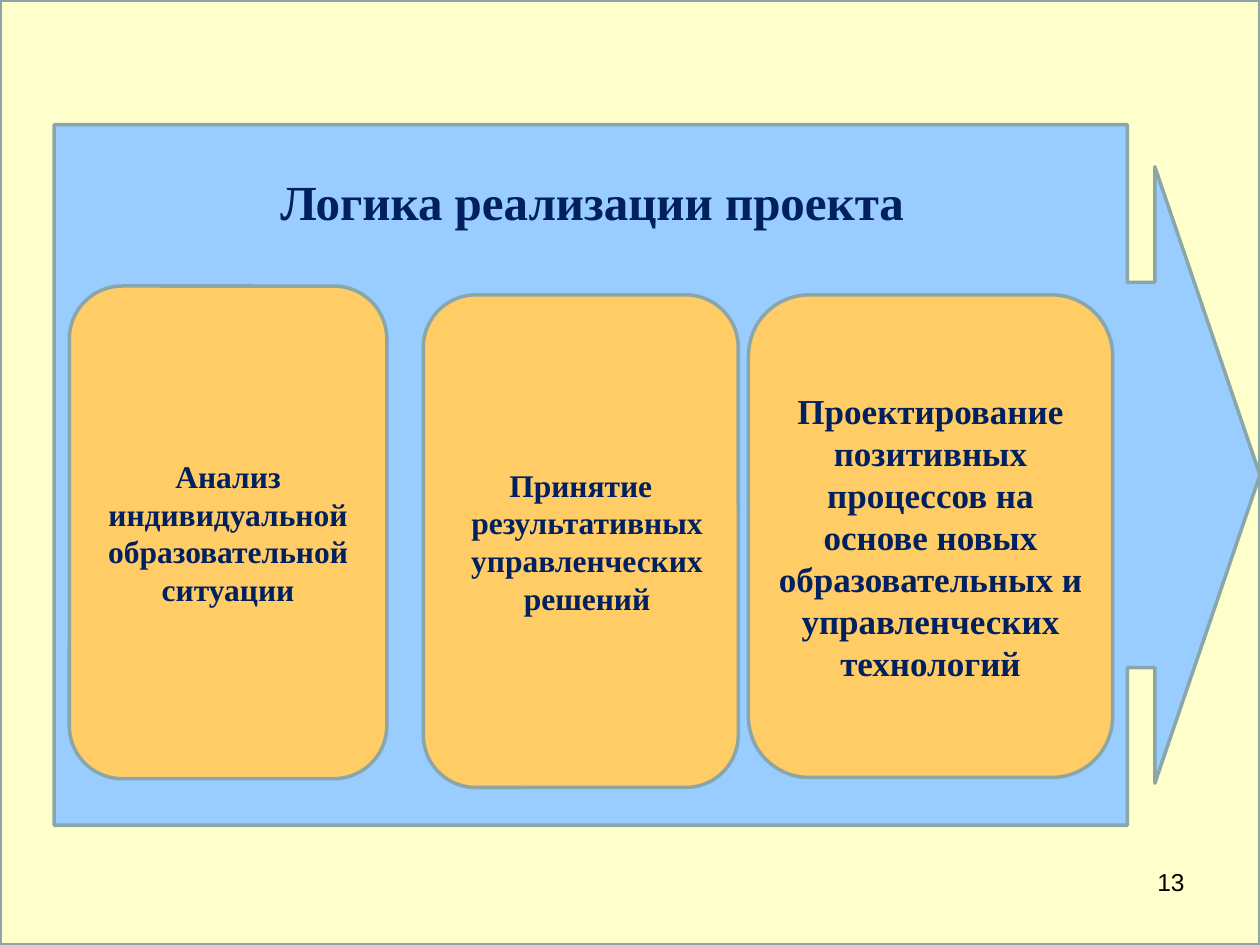
"""Build the project logic slide: three stages inside a callout arrow."""
from pptx import Presentation, util as u
from pptx.dml.color import RGBColor
from pptx.enum import shapes, text

NAVY, SERIF = "002060", "Times New Roman"
MSO, ALIGN, ANCHOR = shapes.MSO_SHAPE, text.PP_ALIGN, text.MSO_ANCHOR

prs = Presentation()
prs.slide_width, prs.slide_height = u.Inches(10), u.Inches(7.5)
s = prs.slides.add_slide(prs.slide_layouts[6])


def share(x, y, w, h):
    W, H = prs.slide_width / 100, prs.slide_height / 100
    return int(x * W), int(y * H), int(w * W), int(h * H)


def write(sp, words, size=18, font=SERIF, color=NAVY, bold=True,
          align=ALIGN.CENTER, anchor=ANCHOR.TOP, hang=0):
    tf = sp.text_frame
    tf.word_wrap, tf.vertical_anchor = True, anchor
    p = tf.paragraphs[0]
    p.alignment = align
    if hang:
        pPr = p._p.get_or_add_pPr()
        pPr.set("marL", str(u.Inches(hang)))
        pPr.set("indent", str(-u.Inches(hang)))
    r = p.add_run()
    r.text = words
    r.font.size, r.font.name, r.font.bold = u.Pt(size), font, bold
    r.font.color.rgb = RGBColor.from_string(color)


stages = [
    ((5.5, 30.27, 25.2, 52.13), 18, 0,
     "Анализ индивидуальной образовательной ситуации"),
    ((33.6, 31.2, 25, 52.13), 18, 0.1,
     "Принятие результативных управленческих решений"),
    ((59.4, 31.2, 28.9, 51.07), 20, 0,
     "Проектирование позитивных процессов на основе новых "
     "образовательных и управленческих технологий"),
]
panels = [
    (MSO.RECTANGLE, (0, 0, 100, 100), "FFFFCC"),
    (MSO.RIGHT_ARROW_CALLOUT, (4.3, 13.2, 95.7, 74.13), "99CCFF"),
] + [(MSO.ROUNDED_RECTANGLE, box, "FFCC66") for box, *_ in stages]

drawn = []
for kind, box, fill in panels:
    sp = s.shapes.add_shape(kind, *share(*box))
    sp.shadow.inherit = False
    sp.fill.solid()
    sp.fill.fore_color.rgb = RGBColor.from_string(fill)
    sp.line.color.rgb = RGBColor.from_string("8AA6A8")
    sp.line.width = u.Pt(2)
    drawn.append(sp)

background, arrow, *cards = drawn
for i, value in enumerate((0.55, 0.44, 0.15, 0.89)):
    arrow.adjustments[i] = value

for sp, (box, size, hang, words) in zip(cards, stages):
    write(sp, words, size=size, hang=hang, anchor=ANCHOR.MIDDLE)

title = s.shapes.add_textbox(*share(10.6, 17.47, 72.8, 7.6))
write(title, "Логика реализации проекта", size=28)

number = s.shapes.add_textbox(*share(71.7, 91.07, 23.3, 6.93))
write(number, "13", size=14, font="Arial", color="000000", bold=False,
      align=ALIGN.RIGHT)

prs.save("out.pptx")
